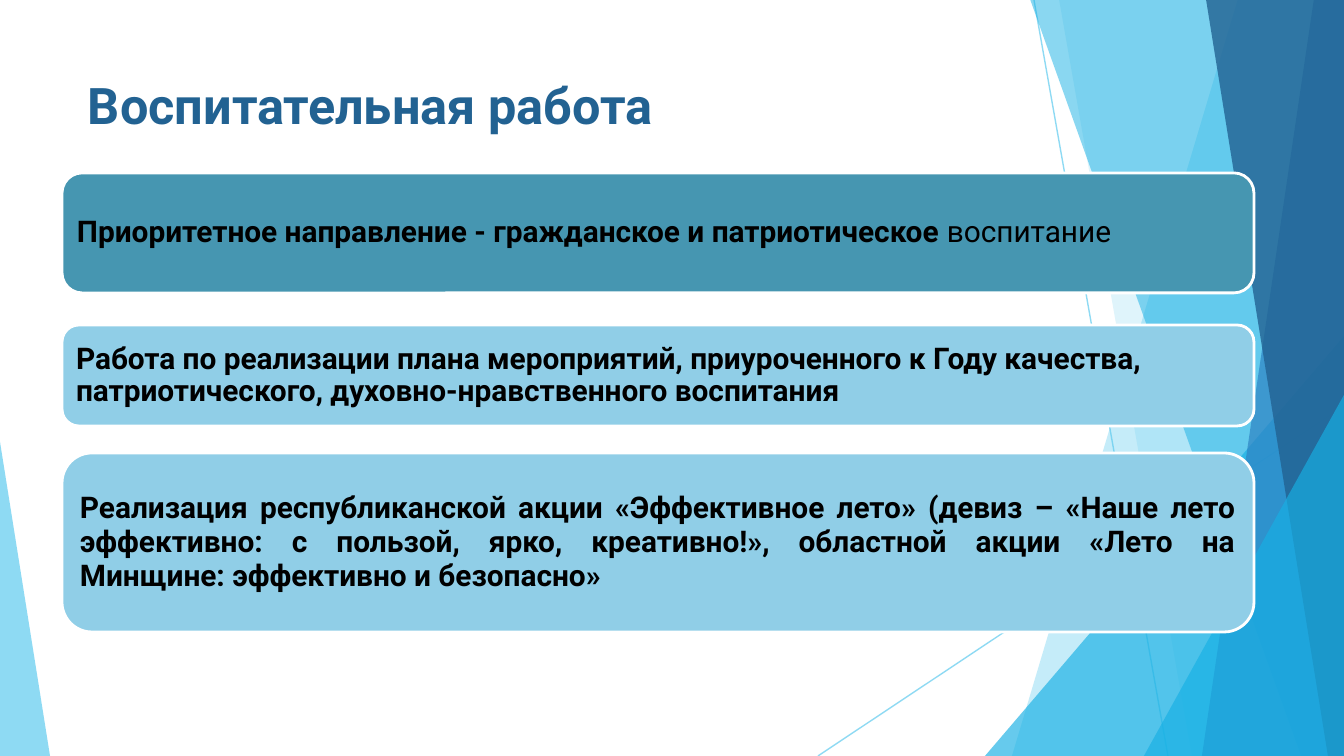
from lxml.etree import SubElement
from pptx import Presentation
from pptx.dml.color import RGBColor
from pptx.enum.shapes import MSO_CONNECTOR, MSO_SHAPE
from pptx.enum.text import MSO_ANCHOR, PP_ALIGN
from pptx.oxml.ns import qn
from pptx.util import Emu, Pt

SKY = RGBColor(0x5F, 0xCB, 0xEF)
CYAN = RGBColor(0x17, 0xB0, 0xE4)
BLUE = RGBColor(0x2E, 0x83, 0xC3)
NAVY = RGBColor(0x22, 0x62, 0x92)
TEAL = RGBColor(0x46, 0x96, 0xB1)
PALE = RGBColor(0x90, 0xCE, 0xE7)
WHITE = RGBColor(0xFF, 0xFF, 0xFF)
BLACK = RGBColor(0, 0, 0)

FONT = "Roboto"
PX = 914400 / 134.4
WIDTH, HEIGHT = 1344, 756
CARD_LEFT, CARD_WIDTH = 62, 1192
CORNER_INSET = 0.05

TITLE = "Воспитательная работа"
CARDS = [
    {"top": 173, "height": 120, "fill": TEAL, "spacing": 0.9, "align": PP_ALIGN.LEFT,
     "runs": [("Приоритетное направление - гражданское и патриотическое ", True),
              ("воспитание", False)]},
    {"top": 325, "height": 101, "fill": PALE, "spacing": 0.9, "align": PP_ALIGN.LEFT,
     "runs": [("Работа по реализации плана мероприятий, приуроченного к Году качества, "
               "патриотического, духовно-нравственного воспитания", True)]},
    {"top": 453, "height": 179, "fill": PALE, "spacing": 0.95, "align": PP_ALIGN.JUSTIFY,
     "runs": [("Реализация республиканской акции «Эффективное лето» (девиз – «Наше лето "
               "эффективно: с пользой, ярко, креативно!», областной акции «Лето на\n"
               "Минщине: эффективно и безопасно»", True)]},
]

RAYS = [((1034, 0), (1168, HEIGHT)), ((WIDTH, 406), (818, HEIGHT))]
DECORATIONS = [
    ("band", (1238, 1012), SKY, 36),
    ("band", (1059, 1192), SKY, 20),
    ("triangle", (985, 336, 359, 420, 1), CYAN, 66),
    ("band", (1030, 1301), CYAN, 50),
    ("band", (1314, 1202), BLUE, 70),
    ("band", (1206, 1328), NAVY, 80),
    ("triangle", (1144, 395, 200, 361, 1), CYAN, 66),
    ("triangle", (0, 442, 50, 314, 0), SKY, 70),
]


def px(value):
    return Emu(round(value * PX))


def set_opacity(shape, percent):
    for color in shape.element.iter(qn("a:srgbClr")):
        SubElement(color, qn("a:alpha"), val=str(percent * 1000))


def add_ray(slide, start, end):
    ray = slide.shapes.add_connector(MSO_CONNECTOR.STRAIGHT, *map(px, start + end))
    ray.line.color.rgb = SKY
    ray.line.width = Pt(0.75)
    set_opacity(ray, 70)
    SubElement(ray.element.spPr, qn("a:effectLst"))


def add_band(slide, top_left, bottom_left):
    builder = slide.shapes.build_freeform(top_left, -1, scale=PX)
    builder.add_line_segments([(WIDTH, -1), (WIDTH, HEIGHT), (bottom_left, HEIGHT)], close=True)
    return builder.convert_to_shape()


def add_triangle(slide, left, top, width, height, apex):
    triangle = slide.shapes.add_shape(
        MSO_SHAPE.ISOSCELES_TRIANGLE, px(left), px(top), px(width), px(height))
    triangle.adjustments[0] = apex
    return triangle


def add_text(slide, runs, box, *, size, color, margins, spacing=1.0,
             align=PP_ALIGN.LEFT, anchor=MSO_ANCHOR.TOP):
    frame = slide.shapes.add_textbox(*map(px, box)).text_frame
    frame.word_wrap = True
    frame.vertical_anchor = anchor
    frame.margin_left = frame.margin_right = px(margins[0])
    frame.margin_top = frame.margin_bottom = px(margins[1])
    paragraph = frame.paragraphs[0]
    paragraph.alignment = align
    paragraph.line_spacing = spacing
    for text, bold in runs:
        for index, line in enumerate(text.split("\n")):
            if index:
                paragraph.add_line_break()
            run = paragraph.add_run()
            run.text = line
            run.font.name = FONT
            run.font.size = Pt(size)
            run.font.bold = bold
            run.font.color.rgb = color


def add_card(slide, card):
    top, height = card["top"], card["height"]
    shape = slide.shapes.add_shape(
        MSO_SHAPE.ROUNDED_RECTANGLE, px(CARD_LEFT), px(top), px(CARD_WIDTH), px(height))
    shape.shadow.inherit = False
    shape.fill.solid()
    shape.fill.fore_color.rgb = card["fill"]
    shape.line.color.rgb = WHITE
    shape.line.width = Pt(1.5)
    inset = height * CORNER_INSET
    box = (CARD_LEFT + inset, top + inset, CARD_WIDTH - 2 * inset, height - 2 * inset)
    add_text(slide, card["runs"], box, size=16, color=BLACK, margins=(9, 9),
             spacing=card["spacing"], align=card["align"], anchor=MSO_ANCHOR.MIDDLE)


def main():
    presentation = Presentation()
    presentation.slide_width, presentation.slide_height = px(WIDTH), px(HEIGHT)
    slide = presentation.slides.add_slide(presentation.slide_layouts[6])
    for start, end in RAYS:
        add_ray(slide, start, end)
    builders = {"band": add_band, "triangle": add_triangle}
    for kind, geometry, color, opacity in DECORATIONS:
        shape = builders[kind](slide, *geometry)
        shape.shadow.inherit = False
        shape.fill.solid()
        shape.fill.fore_color.rgb = color
        shape.line.fill.background()
        set_opacity(shape, opacity)
    add_text(slide, [(TITLE, True)], (75, 67, 948, 145), size=27, color=NAVY, margins=(13, 7))
    for card in CARDS:
        add_card(slide, card)
    presentation.save("out.pptx")


if __name__ == "__main__":
    main()
